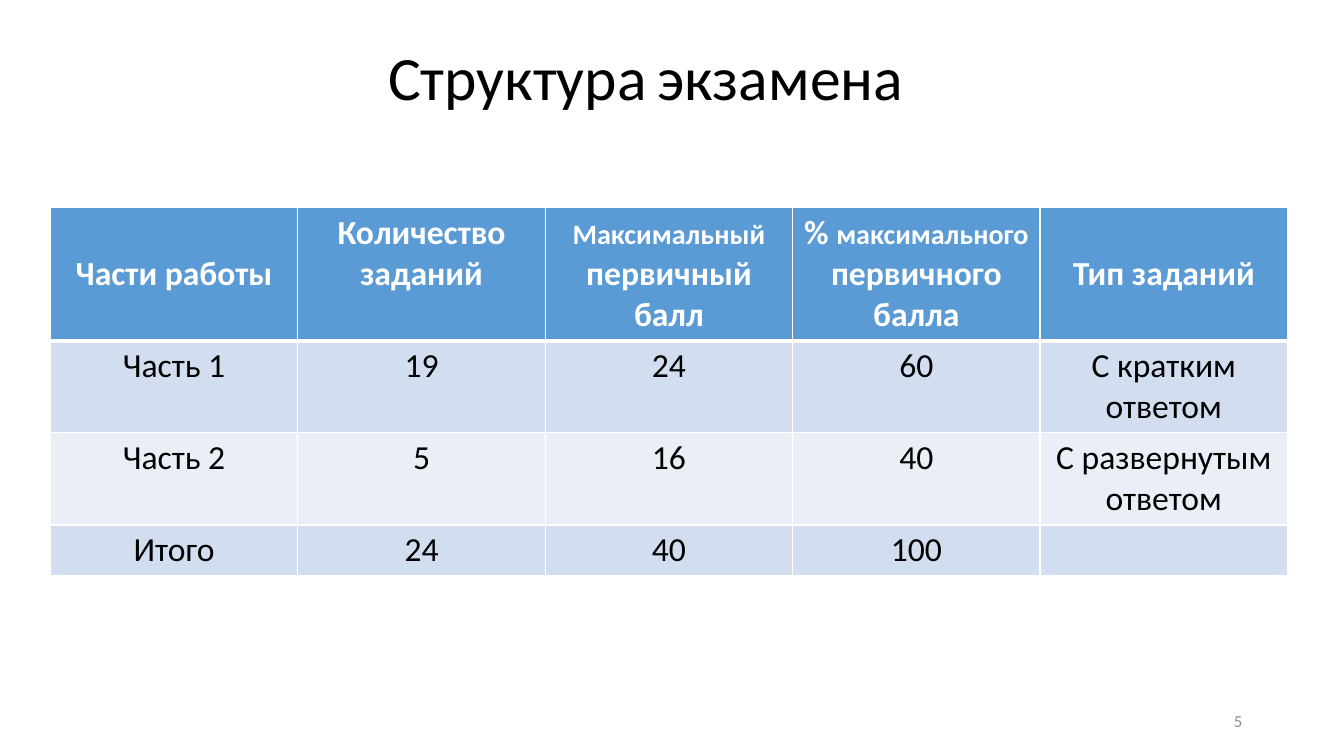
from lxml import etree
from pptx import Presentation
from pptx import util as u
from pptx.dml import color
from pptx.enum import text
from pptx.oxml import ns

HEAD = [
    [("Части работы", 24)],
    [("Количество заданий", 24)],
    [("Максимальный", 20), (" первичный балл", 24)],
    [("% ", 24), ("максимального", 20), (" первичного балла", 24)],
    [("Тип заданий", 24)],
]
BODY = [
    ["Часть 1", "19", "24", "60", "С кратким ответом"],
    ["Часть 2", "5", "16", "40", "С развернутым ответом"],
    ["Итого", "24", "40", "100", ""],
]
HIGH = [1.31, 0.91, 0.91, 0.5]
MID = text.MSO_ANCHOR.MIDDLE
TOP = text.MSO_ANCHOR.TOP
CENTER = text.PP_ALIGN.CENTER


def paint(fmt, tone):
    """Give a font or a fill a solid hex colour."""
    if hasattr(fmt, "solid"):
        fmt.solid()
        fmt.fore_color.rgb = color.RGBColor.from_string(tone)
    else:
        fmt.color.rgb = color.RGBColor.from_string(tone)


def write(frame, runs, tone, align=CENTER, bold=False):
    """Fill the first paragraph of a frame with sized runs."""
    par = frame.paragraphs[0]
    par.alignment = align
    for words, size in runs:
        run = par.add_run()
        run.text = words
        run.font.name = "Calibri"
        run.font.size = u.Pt(size)
        run.font.bold = bold
        paint(run.font, tone)


def label(slide, box, runs, tone, align, anchor):
    """Add a wrapped text box."""
    frame = slide.shapes.add_textbox(*map(u.Inches, box)).text_frame
    frame.word_wrap = True
    frame.vertical_anchor = anchor
    write(frame, runs, tone, align)


def edge(cell, side, width):
    """Draw one white border of a cell."""
    props = cell._tc.get_or_add_tcPr()
    line = etree.SubElement(props, ns.qn("a:ln" + side), w=str(u.Pt(width)))
    fill = etree.SubElement(line, ns.qn("a:solidFill"))
    etree.SubElement(fill, ns.qn("a:srgbClr"), val="FFFFFF")


def grid(slide, left, top, width):
    """Add the table of exam parts."""
    rows = [HEAD] + [[[(word, 24)] if word else [] for word in row] for row in BODY]
    box = map(u.Inches, (left, top, width, sum(HIGH)))
    table = slide.shapes.add_table(len(rows), len(HEAD), *box).table
    for col in table.columns:
        col.width = u.Inches(width / len(HEAD))
    for i, row in enumerate(rows):
        table.rows[i].height = u.Inches(HIGH[i])
        tone = "5B9BD5" if i == 0 else ("EAEFF7", "D2DEEF")[i % 2]
        for j, runs in enumerate(row):
            cell = table.cell(i, j)
            for side in "LRTB":
                thick = (i, side) in ((0, "B"), (1, "T"))
                edge(cell, side, 3 if thick else 1)
            paint(cell.fill, tone)
            cell.vertical_anchor = MID if i == 0 and j in (0, 4) else TOP
            write(cell.text_frame, runs, "000000" if i else "FFFFFF", bold=i == 0)


def main():
    """Build and save the slide."""
    deck = Presentation()
    deck.slide_width, deck.slide_height = u.Inches(13.33), u.Inches(7.5)
    slide = deck.slides.add_slide(deck.slide_layouts[6])
    grid(slide, 0.5, 2.06, 12.27)
    label(slide, (9.42, 6.95, 3, 0.4), [("5", 12)], "8C8C8C", text.PP_ALIGN.RIGHT, MID)
    title = [("Структура", 44), (" ", 32), ("экзамена", 44)]
    label(slide, (0.95, 0.34, 10.91, 0.84), title, "000000", CENTER, TOP)
    deck.save("out.pptx")


if __name__ == "__main__":
    main()
